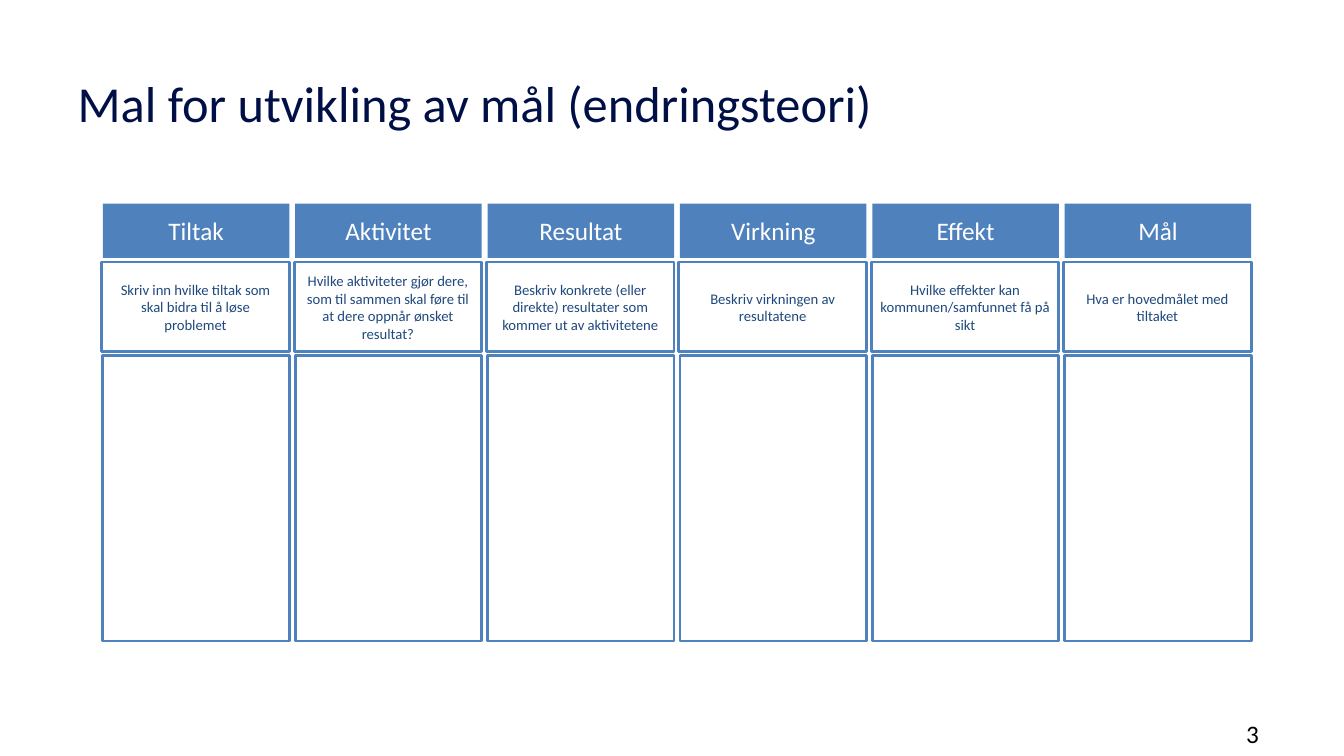
from pptx import Presentation
from pptx.dml.color import RGBColor
from pptx.enum.shapes import MSO_SHAPE as Shape
from pptx.enum.text import MSO_ANCHOR as Anchor, PP_ALIGN as Align
from pptx.util import Inches, Pt

BLUE, NAVY, DARK = "4F81BD", "001046", "1F497D"
WHITE, BLACK = "FFFFFF", "000000"
LEFT, STEP, WIDTH = 1.02, 1.908, 1.85

STAGES = [
    ("Tiltak", "Skriv inn hvilke tiltak som skal bidra til å løse problemet"),
    ("Aktivitet", "Hvilke aktiviteter gjør dere, som til sammen skal føre til "
                  "at dere oppnår ønsket resultat?"),
    ("Resultat", "Beskriv konkrete (eller direkte) resultater som kommer ut "
                 "av aktivitetene"),
    ("Virkning", "Beskriv virkningen av resultatene"),
    ("Effekt", "Hvilke effekter kan kommunen/samfunnet få på sikt"),
    ("Mål", "Hva er hovedmålet med tiltaket"),
]


def color(code):
    return RGBColor.from_string(code)


def assign(item, values):
    for name, value in values.items():
        setattr(item, name, value)


def write(frame, text, size, code, align, **layout):
    assign(frame, {"word_wrap": True, **layout})
    para = frame.paragraphs[0]
    para.alignment = align
    run = para.add_run()
    run.text = text
    assign(run.font, {"name": "Calibri", "size": Pt(size)})
    run.font.color.rgb = color(code)


def place(shape, left, top, width, height):
    assign(shape, {"left": Inches(left), "top": Inches(top),
                   "width": Inches(width), "height": Inches(height)})


def add_title(slide, text):
    title = slide.shapes.title
    place(title, 0.67, 0.4, 12, 1.24)
    write(title.text_frame, text, 36, NAVY, Align.LEFT,
          vertical_anchor=Anchor.MIDDLE)


def add_number(slide, text):
    box = slide.shapes.add_textbox(
        Inches(12.26), Inches(7.08), Inches(0.69), Inches(0.12))
    write(box.text_frame, text, 18, BLACK, Align.LEFT)


def add_box(slide, left, top, width, height, fill=None, line=None):
    box = slide.shapes.add_shape(
        Shape.RECTANGLE, Inches(left), Inches(top),
        Inches(width), Inches(height))
    box.shadow.inherit = False
    if fill:
        box.fill.solid()
        box.fill.fore_color.rgb = color(fill)
    else:
        box.fill.background()
    if line:
        box.line.color.rgb = color(line)
        box.line.width = Pt(2)
    else:
        box.line.fill.background()
    return box


def label(box, text, size, code):
    write(box.text_frame, text, size, code, Align.CENTER,
          vertical_anchor=Anchor.MIDDLE,
          margin_left=Inches(0.08), margin_right=Inches(0.08),
          margin_top=Inches(0.04), margin_bottom=Inches(0.04))


def add_stage(slide, left, name, hint):
    head = add_box(slide, left, 2.02, WIDTH, 0.54, fill=BLUE)
    label(head, name, 18, WHITE)
    guide = add_box(slide, left - 0.01, 2.6, WIDTH + 0.01, 0.89, line=BLUE)
    label(guide, hint, 10.5, DARK)
    add_box(slide, left, 3.53, WIDTH, 2.83, fill=WHITE, line=BLUE)


def main():
    deck = Presentation()
    assign(deck, {"slide_width": Inches(13.33), "slide_height": Inches(7.5)})
    slide = deck.slides.add_slide(deck.slide_layouts[5])

    # Heading and page number
    add_title(slide, "Mal for utvikling av mål (endringsteori)")
    add_number(slide, "3")

    # One column per stage: name, guidance, empty field
    for index, (name, hint) in enumerate(STAGES):
        add_stage(slide, LEFT + index * STEP, name, hint)

    deck.save("out.pptx")


if __name__ == "__main__":
    main()
